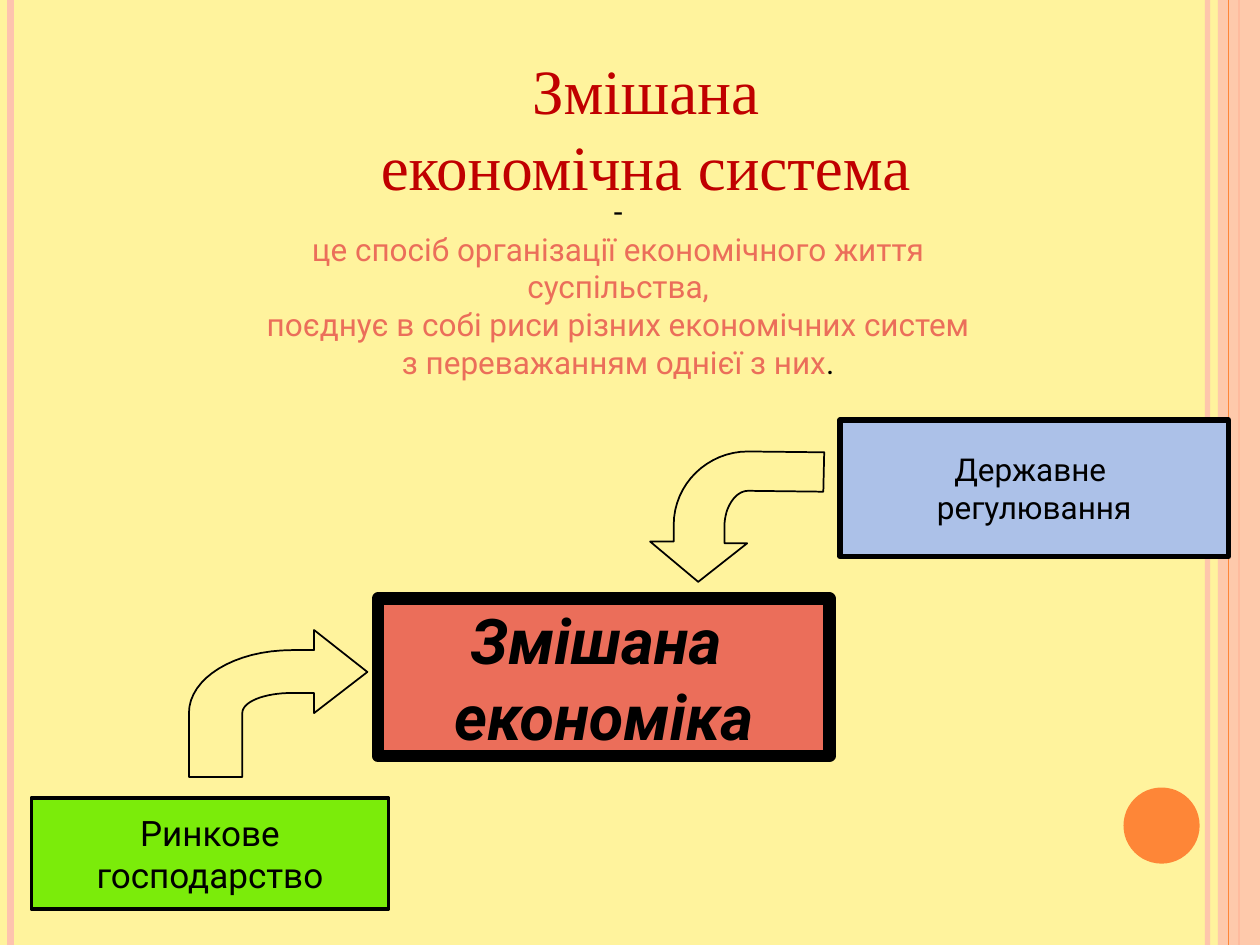
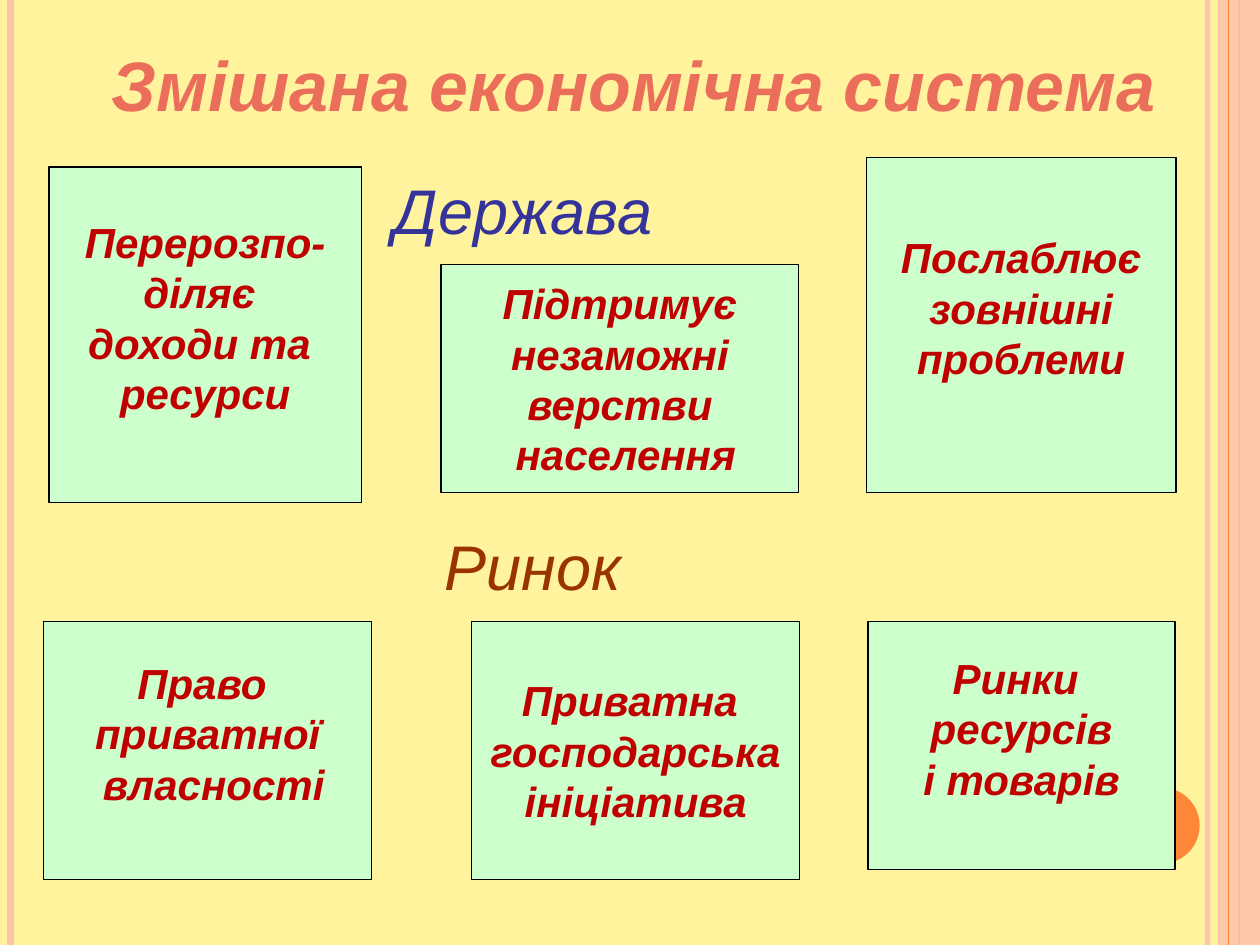
import pptx
import pptx.dml.color
import pptx.enum.shapes
import pptx.enum.text
import pptx.oxml
import pptx.oxml.ns
import pptx.util

Pt = pptx.util.Pt
RGB = pptx.dml.color.RGBColor
SHAPE = pptx.enum.shapes.MSO_SHAPE
ANCHOR = pptx.enum.text.MSO_ANCHOR
ALIGN = pptx.enum.text.PP_ALIGN

CREAM = RGB(0xFF, 0xF3, 0x9D)
PEACH = RGB(0xFE, 0xC3, 0xAE)
ORANGE = RGB(0xFE, 0x86, 0x37)
CORAL = RGB(0xEB, 0x6E, 0x5A)
RED = RGB(0xC0, 0x00, 0x00)
BLUE = RGB(0xAC, 0xC1, 0xE8)
GREEN = RGB(0x7B, 0xEC, 0x0A)
MINT = RGB(0xCC, 0xFF, 0xCC)
INDIGO = RGB(0x33, 0x33, 0x99)
BROWN = RGB(0x99, 0x33, 0x00)
BLACK = RGB(0x00, 0x00, 0x00)

WIDTH, HEIGHT = 720, 540
TITLE_ONLY, TITLE_AND_BODY = 5, 1


def style(font, size, color, bold=False, italic=False):
    return dict(name=font, size=Pt(size), color=color, bold=bold, italic=italic)


def curve(start, c1, c2, end, steps=16):
    """Points of a cubic curve, without its start."""
    points = []
    for step in range(1, steps + 1):
        t = step / steps
        weights = ((1 - t) ** 3, 3 * t * (1 - t) ** 2, 3 * t * t * (1 - t), t ** 3)
        points.append(tuple(sum(w * p[axis] for w, p in zip(weights, (start, c1, c2, end)))
                            for axis in (0, 1)))
    return points


class Deck:
    def __init__(self):
        self.prs = pptx.Presentation()
        self.prs.slide_width, self.prs.slide_height = Pt(WIDTH), Pt(HEIGHT)
        background = self.prs.slide_master.background.fill
        background.solid()
        background.fore_color.rgb = CREAM
        self.slide = None

    def new_slide(self, layout):
        self.slide = self.prs.slides.add_slide(self.prs.slide_layouts[layout])
        self.side_line(690, PEACH, 3, opacity=93)
        self.side_line(6, PEACH, 4.5)
        self.side_line(708, ORANGE, 1.5)
        band = self.shape(SHAPE.RECTANGLE, (696, 0, 24, HEIGHT), PEACH)
        self.set_opacity(band, 87)
        self.side_line(702, ORANGE, 0.75)
        self.shape(SHAPE.OVAL, (642, 450, 43.5, 43.5), ORANGE)

    def set_opacity(self, shape, percent):
        # python-pptx has no alpha setting
        color = shape._element.spPr.find(".//" + pptx.oxml.ns.qn("a:srgbClr"))
        color.append(pptx.oxml.parse_xml(
            f'<a:alpha {pptx.oxml.ns.nsdecls("a")} val="{percent * 1000}"/>'))

    def side_line(self, x, color, width, opacity=None):
        line = self.slide.shapes.add_connector(
            pptx.enum.shapes.MSO_CONNECTOR.STRAIGHT, Pt(x), 0, Pt(x), Pt(HEIGHT))
        line.line.color.rgb = color
        line.line.width = Pt(width)
        if opacity:
            self.set_opacity(line, opacity)
        line._element.spPr.append(pptx.oxml.parse_xml(
            f'<a:effectLst {pptx.oxml.ns.nsdecls("a")}/>'))

    def paint(self, shape, fill, border):
        shape.shadow.inherit = False
        shape.fill.solid()
        shape.fill.fore_color.rgb = fill
        if border:
            shape.line.color.rgb = BLACK
            shape.line.width = Pt(border)
        else:
            shape.line.fill.background()

    def shape(self, kind, place, fill, border=0):
        shape = self.slide.shapes.add_shape(kind, *map(Pt, place))
        self.paint(shape, fill, border)
        return shape

    def add_text(self, frame, paragraphs, align=ALIGN.CENTER):
        """Each paragraph is a list of (text, style) runs."""
        for index, runs in enumerate(paragraphs):
            paragraph = frame.add_paragraph() if index else frame.paragraphs[0]
            paragraph.alignment = align
            paragraph.space_before = Pt(0)
            for text, look in runs:
                for part, line in enumerate(text.split("\n")):
                    if part:
                        paragraph.add_line_break()
                    run = paragraph.add_run()
                    run.text = line
                    run.font.name, run.font.size = look["name"], look["size"]
                    run.font.bold, run.font.italic = look["bold"], look["italic"]
                    run.font.color.rgb = look["color"]

    def placeholder(self, index, place, paragraphs, side_inset=7.2):
        holder = self.slide.placeholders[index]
        holder.left, holder.top, holder.width, holder.height = map(Pt, place)
        frame = holder.text_frame
        frame.word_wrap = True
        frame.auto_size = pptx.enum.text.MSO_AUTO_SIZE.NONE
        frame.vertical_anchor = ANCHOR.TOP
        frame.margin_left = frame.margin_right = Pt(side_inset)
        self.add_text(frame, paragraphs)
        for paragraph in frame.paragraphs:
            props = paragraph._p.get_or_add_pPr()
            props.set("marL", "0")
            props.set("indent", "0")
            props.append(pptx.oxml.parse_xml(f'<a:buNone {pptx.oxml.ns.nsdecls("a")}/>'))

    def box(self, place, lines, look, fill, border, lift=0):
        """A bordered box; lift raises its centred text."""
        frame = self.shape(SHAPE.RECTANGLE, place, fill, border).text_frame
        frame.word_wrap = False
        frame.vertical_anchor = ANCHOR.MIDDLE
        frame.margin_bottom = Pt(3.6 + 2 * lift)
        self.add_text(frame, [[(line, look)] for line in lines])

    def label(self, place, text, look):
        frame = self.slide.shapes.add_textbox(*map(Pt, place)).text_frame
        frame.word_wrap = True
        self.add_text(frame, [[(text, look)]], ALIGN.LEFT)

    def arrow(self, points):
        corners = [(Pt(x), Pt(y)) for x, y in points]
        builder = self.slide.shapes.build_freeform(*corners[0])
        builder.add_line_segments(corners[1:], close=True)
        self.paint(builder.convert_to_shape(), CREAM, 1)


def definition_slide(deck):
    deck.new_slide(TITLE_AND_BODY)

    # Title and definition
    heading = style("Times New Roman", 36, RED)
    deck.placeholder(0, (84, 26, 570, 84),
                     [[("Змішана", heading)], [("економічна система", heading)]])
    plain = style("Roboto", 18, BLACK)
    definition = ("це спосіб організації економічного життя суспільства,\n"
                  "поєднує в собі риси різних економічних систем\n"
                  "з переважанням однієї з них")
    deck.placeholder(1, (121, 106, 464.5, 94.5),
                     [[("-", plain)],
                      [(definition, style("Roboto", 18, CORAL)), (".", plain)]],
                     side_inset=16)

    # Mixed economy and its two sources
    deck.box((216, 342, 258, 90), ("Змішана ", "економіка"),
             style("Roboto", 36, BLACK, True, True), CORAL, 7)
    deck.box((480, 240, 222, 78), ("Державне ", "регулювання"), plain, BLUE, 3)
    deck.box((18, 456, 204, 63.5), ("Ринкове", "господарство"),
             style("Roboto", 20, BLACK), GREEN, 2.25)

    # Arrow from the market
    deck.arrow([(210, 384), (179.5, 360), (179.5, 371.5), (167, 371.5),
                *curve((167, 371.5), (134, 371.5), (108, 387.5), (108, 407.5)),
                (108, 444), (138.5, 444), (138.5, 407.5),
                *curve((138.5, 407.5), (138.5, 401), (151, 396), (167, 396)),
                (179.5, 396), (179.5, 407.5)])

    # Arrow from the state
    deck.arrow([(399, 332.5), (371.5, 309.5), (385, 309.5), (385, 300),
                *curve((385, 300), (385, 276.5), (404.5, 258), (427.5, 258)),
                (471, 258.5), (470.5, 281), (427.5, 280.5),
                *curve((427.5, 280.5), (420.5, 280.5), (414, 289.5), (414, 301)),
                (414, 310.5), (427, 310.5)])


def roles_slide(deck):
    deck.new_slide(TITLE_ONLY)
    deck.placeholder(0, (14.5, 20, 695, 55.5),
                     [[("Змішана економічна система", style("Arial", 40, CORAL, True, True))]])

    # Roles: place, lines, lift of the text
    roles = [
        # Market
        ((25, 355, 187.5, 147.5), ("Право ", "приватної", " власності"), 10),
        ((269.5, 355, 187.5, 147.5), ("Приватна ", "господарська", "ініціатива"), 0),
        ((496, 355, 175.5, 142), ("Ринки ", "ресурсів", "і товарів"), 10),
        # State
        ((28, 95.5, 178.5, 191.5), ("Перерозпо-", "діляє ", "доходи та ", "ресурси"), 10),
        ((252, 151, 204.5, 130.5), ("Підтримує", " незаможні ", "верстви", " населення"), 0),
        ((495, 90, 177, 191.5), ("Послаблює", "зовнішні", "проблеми"), 10),
    ]
    role_text = style("Arial", 24, RED, True, True)
    for place, lines, lift in roles:
        deck.box(place, lines, role_text, MINT, 0.75, lift)

    # Group names
    deck.label((247, 298, 221, 45.5), "Ринок", style("Arial", 36, BROWN, italic=True))
    deck.label((218, 94.5, 260.5, 52), "Держава", style("Arial", 36, INDIGO, italic=True))


def main():
    deck = Deck()
    definition_slide(deck)
    roles_slide(deck)
    deck.prs.save("out.pptx")


if __name__ == "__main__":
    main()
